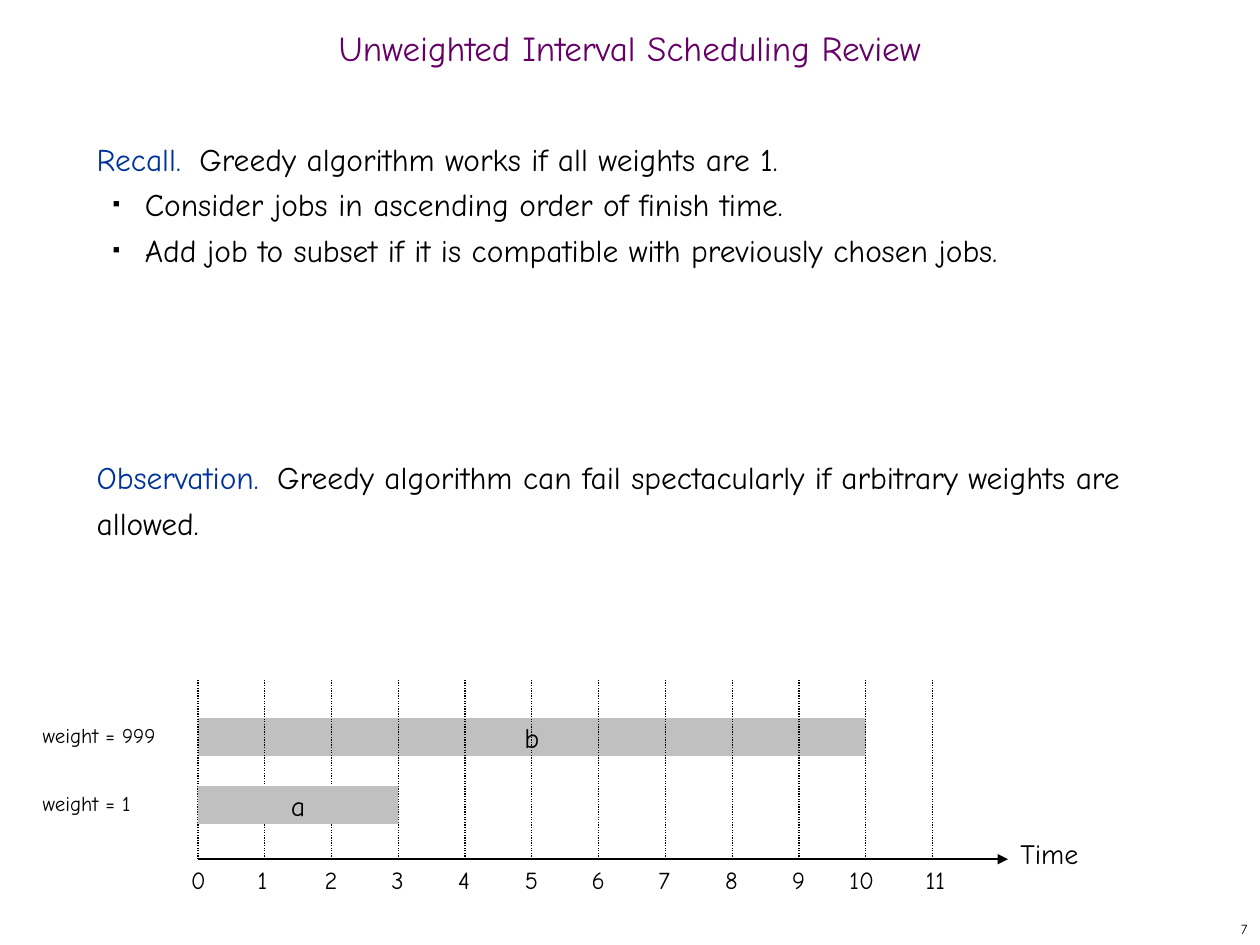
from dataclasses import dataclass

from lxml.etree import SubElement
from pptx import Presentation
from pptx.dml.color import RGBColor
from pptx.enum.dml import MSO_LINE
from pptx.enum.shapes import MSO_CONNECTOR, MSO_SHAPE
from pptx.enum.text import MSO_ANCHOR, PP_ALIGN
from pptx.oxml.ns import qn
from pptx.util import Cm, Pt

COLOURS = {"title": "660066", "lead": "003399", "text": "000000", "bar": "C0C0C0"}
FONT = "Comic Neue"

# Time axis, in centimetres
ORIGIN = 3.99
UNIT = 14.81 / 11
LAST_HOUR = 11
AXIS_Y = 17.32
GRID_TOP = 13.69
BAR_HEIGHT = 0.76


@dataclass(frozen=True)
class Job:
    name: str
    weight: int
    finish: int
    top: float
    label_width: float


LONG_JOB = Job("b", 999, 10, 14.48, 3.02)
SHORT_JOB = Job("a", 1, 3, 15.85, 2.46)


def colour(name: str) -> RGBColor:
    return RGBColor.from_string(COLOURS[name])


def add_span(para, text: str, size: float, ink: str = "text"):
    span = para.add_run()
    span.text = text
    for key, value in {"name": FONT, "size": Pt(size)}.items():
        setattr(span.font, key, value)
    span.font.color.rgb = colour(ink)
    return span


def add_box(page, left: float, top: float, width: float, height: float, **formats):
    box = page.shapes.add_textbox(Cm(left), Cm(top), Cm(width), Cm(height))
    for key, value in {"word_wrap": True, **formats}.items():
        setattr(box.text_frame, key, value)
    return box.text_frame


def add_label(page, text: str, size: float, left: float, top: float, width: float,
              height: float, **formats):
    para = add_box(page, left, top, width, height, **formats).paragraphs[0]
    add_span(para, text, size)
    return para


def add_statement(para, lead: str, text: str) -> None:
    """Coloured lead word, a wide space, then the sentence."""
    para.line_spacing = Pt(26)
    add_span(para, lead, 18, "lead")
    gap = add_span(para, " ", 18)
    gap.font._element.set("spc", "450")
    add_span(para, text, 18)


def add_bullet(frame, text: str) -> None:
    para = frame.add_paragraph()
    para.line_spacing = Pt(26)
    add_span(para, text, 18)
    properties = para._p.get_or_add_pPr()
    properties.set("marL", str(Cm(0.97)))
    properties.set("indent", str(-Cm(0.64)))
    SubElement(properties, qn("a:buSzPct"), val="35000")
    SubElement(properties, qn("a:buFont"), typeface="Arial")
    SubElement(properties, qn("a:buChar"), char="■")


def add_line(page, start: tuple[float, float], end: tuple[float, float], weight: float):
    connector = page.shapes.add_connector(
        MSO_CONNECTOR.STRAIGHT, *(Cm(value) for value in start + end))
    connector.line.color.rgb = colour("text")
    connector.line.width = Pt(weight)
    SubElement(connector._element.spPr, qn("a:effectLst"))
    return connector.line


def add_job(page, job: Job) -> None:
    bar = page.shapes.add_shape(MSO_SHAPE.RECTANGLE, Cm(ORIGIN), Cm(job.top),
                                Cm(job.finish * UNIT), Cm(BAR_HEIGHT))
    bar.shadow.inherit = False
    bar.fill.solid()
    bar.fill.fore_color.rgb = colour("bar")
    bar.line.fill.background()
    frame = bar.text_frame
    for key, value in {"word_wrap": False, "vertical_anchor": MSO_ANCHOR.MIDDLE}.items():
        setattr(frame, key, value)
    frame.paragraphs[0].alignment = PP_ALIGN.CENTER
    add_span(frame.paragraphs[0], job.name, 16)
    add_label(page, f"weight = {job.weight}", 12, 0.61, job.top - 0.04,
              job.label_width, 0.86, word_wrap=False)


def add_axis(page) -> None:
    axis = add_line(page, (ORIGIN, AXIS_Y), (20.32, AXIS_Y), 1.25)
    SubElement(axis._get_or_add_ln(), qn("a:tailEnd"), type="triangle")
    add_label(page, "Time", 16, 20.32, 16.74, 2.11, 1.04)
    shifts = {10: 0.58}
    for hour in range(LAST_HOUR + 1):
        left = ORIGIN + hour * UNIT - shifts.get(hour, 0.39)
        add_label(page, str(hour), 14, left, AXIS_Y, 1.14, 0.94)


def add_grid(page) -> None:
    for hour in range(LAST_HOUR + 1):
        x = ORIGIN + hour * UNIT
        add_line(page, (x, AXIS_Y), (x, GRID_TOP), 0.75).dash_style = MSO_LINE.ROUND_DOT


def main() -> None:
    deck = Presentation()
    deck.slide_width, deck.slide_height = Cm(25.4), Cm(19.05)
    page = deck.slides.add_slide(deck.slide_layouts[6])

    # Page number and title
    number = add_label(page, "7", 8, 20.12, 18.42, 5.28, 0.63,
                       word_wrap=False, vertical_anchor=MSO_ANCHOR.MIDDLE)
    number.alignment = PP_ALIGN.RIGHT
    title = add_box(page, 0, 0.43, 25.4, 1.27,
                    vertical_anchor=MSO_ANCHOR.MIDDLE).paragraphs[0]
    for key, value in {"alignment": PP_ALIGN.CENTER, "line_spacing": 0.7}.items():
        setattr(title, key, value)
    add_span(title, "Unweighted Interval Scheduling Review", 20, "title")

    # Statements
    recall = add_box(page, 1.7, 2.54, 21.79, 3.2)
    add_statement(recall.paragraphs[0], "Recall.",
                  "Greedy algorithm works if all weights are 1.")
    add_bullet(recall, "Consider jobs in ascending order of finish time.")
    add_bullet(recall, "Add job to subset if it is compatible with previously chosen jobs.")
    observation = add_box(page, 1.7, 8.96, 21.79, 2.2)
    add_statement(observation.paragraphs[0], "Observation.",
                  "Greedy algorithm can fail spectacularly if arbitrary weights are allowed.")

    # Timeline: the grid runs over the long job and under the short one
    add_axis(page)
    add_job(page, LONG_JOB)
    add_grid(page)
    add_job(page, SHORT_JOB)

    deck.save("out.pptx")


if __name__ == "__main__":
    main()
